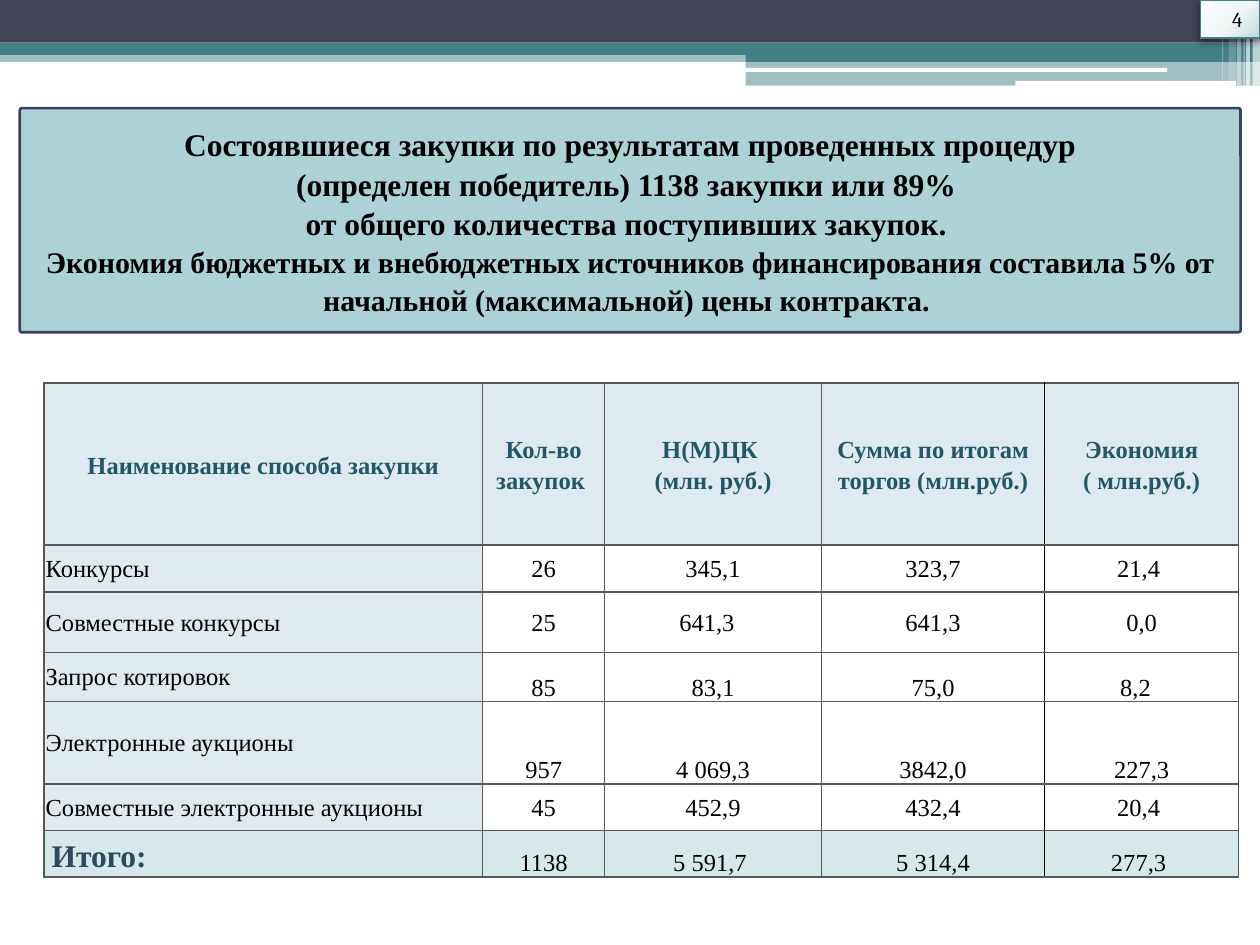
from lxml.etree import SubElement
from pptx import Presentation
from pptx.dml.color import RGBColor
from pptx.enum.shapes import MSO_SHAPE
from pptx.enum.text import MSO_ANCHOR, PP_ALIGN
from pptx.oxml import parse_xml
from pptx.oxml.ns import nsdecls, qn
from pptx.util import Cm, Pt

COLORS = {
    "navy": "424456", "teal": "438086", "white": "FFFFFF", "black": "000000",
    "title_fill": "ADD2D6", "title_line": "3D3E66", "header_text": "215868",
    "total_text": "2B4A5E", "label_fill": "DEE9F0", "total_fill": "D6E9EA",
    "border": "585858", "badge_light": "FEFEFE", "badge_mid": "F0F6F6",
    "badge_dark": "BFD9DD",
}
SERIF = "Times New Roman"

prs = Presentation()
prs.slide_width, prs.slide_height = Cm(25.4), Cm(19.05)
slide = prs.slides.add_slide(prs.slide_layouts[6])


def add_block(preset, box, color, opacity=100):
    """Add a borderless, shadowless shape; box is left, top, width, height in cm."""
    block = slide.shapes.add_shape(preset, *[Cm(length) for length in box])
    block.shadow.inherit = False
    block.line.fill.background()
    block.fill.solid()
    block.fill.fore_color.rgb = RGBColor.from_string(COLORS[color])
    if opacity < 100:
        srgb = block.fill._xPr.find(".//" + qn("a:srgbClr"))
        SubElement(srgb, qn("a:alpha"), val=str(opacity * 1000))
    return block


def add_run(paragraph, text, size, color="black", bold=False, font=SERIF):
    run = paragraph.add_run()
    run.text = text
    run.font.name = font
    run.font.size = Pt(size)
    run.font.bold = bold
    run.font.color.rgb = RGBColor.from_string(COLORS[color])


# Header bands
RECT, ROUNDED = MSO_SHAPE.RECTANGLE, MSO_SHAPE.ROUNDED_RECTANGLE
header_bands = [
    (RECT, (0, 1.02, 25.4, 0.23), "teal", 50),
    (RECT, (0, 0, 25.4, 0.86), "navy", 100),
    (RECT, (0, 0.86, 25.4, 0.25), "teal", 100),
    (RECT, (15.03, 1, 10.37, 0.25), "teal", 100),
    (RECT, (15.03, 1.23, 10.37, 0.5), "teal", 50),
    (ROUNDED, (15.01, 1.37, 8.52, 0.08), "white", 100),
    (ROUNDED, (20.47, 1.63, 4.45, 0.1), "white", 100),
]
for band in header_bands:
    add_block(*band)

# Thin translucent stripes at the right edge: left, width, height, opacity
edge_stripes = [
    (25.25, 0.15, 1.73, 65), (25.12, 0.08, 1.73, 65), (25.07, 0.02, 1.73, 60),
    (24.94, 0.08, 1.73, 40), (24.77, 0.15, 1.63, 20), (24.64, 0.02, 1.63, 30),
]
for left, width, height, opacity in edge_stripes:
    add_block(RECT, (left, 0, width, height), "white", opacity)

# Title
title = add_block(ROUNDED, (0.4, 2.18, 24.61, 4.52), "title_fill")
title.adjustments[0] = 0.01
title.line.color.rgb = RGBColor.from_string(COLORS["title_line"])
title.line.width = Pt(1.5)
title.text_frame.word_wrap = True
title.text_frame.vertical_anchor = MSO_ANCHOR.MIDDLE
title_paragraph = title.text_frame.paragraphs[0]
title_paragraph.alignment = PP_ALIGN.CENTER
title_paragraph.line_spacing = 1.05
for line in [
    "Состоявшиеся закупки по результатам проведенных процедур",
    "(определен победитель) 1138 закупки или 89% ",
    "от общего количества поступивших закупок. ",
]:
    add_run(title_paragraph, line, 18, bold=True)
    title_paragraph.add_line_break()
add_run(title_paragraph, "Экономия бюджетных и внебюджетных источников финансирования "
        "составила 5% от начальной (максимальной) цены контракта. ", 17.1, bold=True)

# Procurement table
header = ["Наименование способа закупки", "Кол-во закупок ", "Н(М)ЦК \n(млн. руб.)",
          "Сумма по итогам торгов (млн.руб.)", "Экономия\n( млн.руб.)"]
procurements = [
    ["Конкурсы", "26", "345,1", "323,7", "21,4 "],
    ["Совместные конкурсы", "25", "641,3  ", "641,3", "0,0"],
    ["Запрос котировок", "85", "83,1", "75,0", "8,2  "],
    ["Электронные аукционы", "957", "4 069,3", "3842,0", "227,3"],
    ["Совместные электронные аукционы", "45", "452,9", "432,4", "20,4 "],
    ["Итого:", "1138", "5 591,7 ", "5 314,4", "277,3 "],
]
column_widths = [8.84, 2.46, 4.37, 4.5, 3.91]
row_heights = [3.27, 0.94, 1.22, 0.99, 1.66, 0.94, 0.94]
total_row = len(procurements)
bottom_anchored_rows = {3, 4, total_row}

table = slide.shapes.add_table(
    len(row_heights), len(column_widths), Cm(0.89), Cm(7.72),
    Cm(sum(column_widths)), Cm(sum(row_heights))).table
table.first_row = table.horz_banding = False
for column, width in zip(table.columns, column_widths):
    column.width = Cm(width)
for row, height in zip(table.rows, row_heights):
    row.height = Cm(height)

for r, values in enumerate([header] + procurements):
    for c, value in enumerate(values):
        cell = table.cell(r, c)
        is_header, is_label = r == 0, c == 0
        is_total_label = is_label and r == total_row
        spacious = is_header or is_total_label
        cell.margin_left = cell.margin_right = Cm(0.15 if spacious else 0.03)
        cell.margin_top = Cm(0 if spacious else 0.03)
        cell.margin_bottom = 0
        at_bottom = r in bottom_anchored_rows and not is_label
        cell.vertical_anchor = MSO_ANCHOR.BOTTOM if at_bottom else MSO_ANCHOR.MIDDLE

        if r == total_row or is_header or is_label:
            cell.fill.solid()
            fill = "total_fill" if r == total_row else "label_fill"
            cell.fill.fore_color.rgb = RGBColor.from_string(COLORS[fill])
        else:
            cell.fill.background()

        for i, line in enumerate(value.split("\n")):
            frame = cell.text_frame
            paragraph = frame.add_paragraph() if i else frame.paragraphs[0]
            centred = is_header or not is_label
            paragraph.alignment = PP_ALIGN.CENTER if centred else PP_ALIGN.LEFT
            if spacious:
                paragraph.line_spacing = 1.15
            color = ("header_text" if is_header
                     else "total_text" if is_total_label else "black")
            add_run(paragraph, line, 18 if is_total_label else 14, color, spacious)

        # Borders come before the fill in the cell properties
        black_side = {3: "R", 4: "L"}.get(c)
        for position, side in enumerate("LRTB"):
            color = COLORS["black" if side == black_side else "border"]
            cell._tc.get_or_add_tcPr().insert(position, parse_xml(
                f'<a:ln{side} {nsdecls("a")} w="12700"><a:solidFill>'
                f'<a:srgbClr val="{color}"/></a:solidFill></a:ln{side}>'))

# Page number badge
badge = add_block(RECT, (24.2, 0, 1.2, 0.77), "badge_light")
badge.line.color.rgb = RGBColor.from_string(COLORS["teal"])
badge.line.width = Pt(0.75)
badge_stops = "".join(
    f'<a:gs pos="{position * 1000}"><a:srgbClr val="{COLORS[name]}"/></a:gs>'
    for position, name in [(0, "badge_light"), (55, "badge_mid"), (100, "badge_dark")])
badge_properties = badge._element.spPr
badge_properties.replace(badge_properties.find(qn("a:solidFill")), parse_xml(
    f'<a:gradFill {nsdecls("a")}><a:gsLst>{badge_stops}</a:gsLst><a:path path="circle">'
    '<a:fillToRect l="-40000" t="-90000" r="140000" b="190000"/></a:path></a:gradFill>'))
badge_properties.find(qn("a:effectLst")).append(parse_xml(
    f'<a:outerShdw {nsdecls("a")} blurRad="52000" dist="25400" dir="5400000">'
    f'<a:srgbClr val="{COLORS["black"]}"><a:alpha val="40000"/></a:srgbClr></a:outerShdw>'))
badge.text_frame.margin_left = Cm(0.64)
badge.text_frame.margin_right = 0
badge.text_frame.vertical_anchor = MSO_ANCHOR.MIDDLE
page_number = badge.text_frame.paragraphs[0]
page_number.alignment = PP_ALIGN.LEFT
add_run(page_number, "4", 12, font="Cambria")

prs.save("out.pptx")
